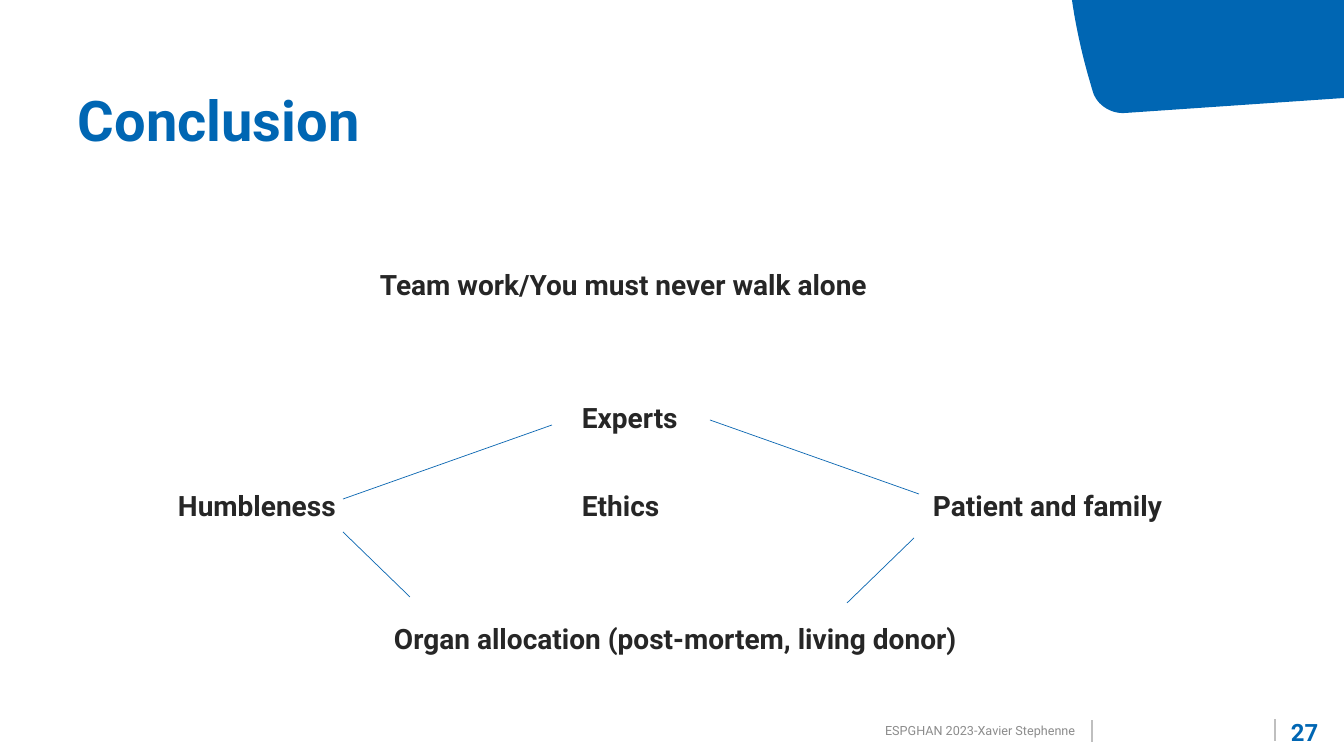
import dataclasses

import pptx
import pptx.dml.color
import pptx.enum.shapes
import pptx.enum.text
import pptx.oxml.ns
import pptx.util
from lxml import etree

EMU_PER_PX = 914400 / 100.8
ANCHOR = pptx.enum.text.MSO_ANCHOR
ALIGN = pptx.enum.text.PP_ALIGN


@dataclasses.dataclass(frozen=True)
class Theme:
    font: str = "Roboto"
    blue: str = "0066B3"
    link: str = "0B67B2"
    ink: str = "262626"
    muted: str = "8C8C8C"
    rule: str = "BFBFBF"
    white: str = "FFFFFF"
    title_size: int = 40
    label_size: int = 20
    number_size: int = 17
    footer_size: int = 9
    thin: float = 0.5
    medium: float = 1


THEME = Theme()


def px(length):
    return pptx.util.Emu(round(length * EMU_PER_PX))


def rgb(color):
    return pptx.dml.color.RGBColor.from_string(color)


def add_text(page, box, text, size, color, bold=True, anchor=ANCHOR.MIDDLE,
             align=ALIGN.LEFT, spacing=0.9):
    shape = page.shapes.add_textbox(*map(px, box))
    frame = shape.text_frame
    frame.word_wrap = True
    frame.vertical_anchor = anchor
    frame.margin_left = frame.margin_right = 0
    frame.margin_top = frame.margin_bottom = 0
    para = frame.paragraphs[0]
    para.alignment = align
    para.line_spacing = spacing
    span = para.add_run()
    span.text = text
    span.font.name = THEME.font
    span.font.size = pptx.util.Pt(size)
    span.font.bold = bold
    span.font.color.rgb = rgb(color)


def add_line(page, start, end, color, width):
    line = page.shapes.add_connector(
        pptx.enum.shapes.MSO_CONNECTOR.STRAIGHT, *map(px, (*start, *end)))
    line.line.color.rgb = rgb(color)
    line.line.width = pptx.util.Pt(width)
    properties = line._element.spPr
    etree.SubElement(properties, pptx.oxml.ns.qn("a:effectLst"))


def curve_points(start, first, second, end, steps=16):
    for step in range(1, steps + 1):
        t = step / steps
        weights = ((1 - t) ** 3, 3 * t * (1 - t) ** 2, 3 * t * t * (1 - t), t ** 3)
        yield tuple(sum(weight * point[axis] for weight, point
                        in zip(weights, (start, first, second, end)))
                    for axis in (0, 1))


def draw_corner(page, box):
    left, top, width, height = box
    edge, bend = (53, height), (21, 92)
    outline = [(width, 0), (width, 98), edge,
               *curve_points(edge, (39, 114), (25, 105), bend),
               *curve_points(bend, (15, 72), (6, 41), (0, 0))]
    builder = page.shapes.build_freeform(px(left), px(top), scale=1.0)
    builder.add_line_segments([(px(left + x), px(top + y)) for x, y in outline])
    corner = builder.convert_to_shape()
    corner.shadow.inherit = False
    corner.fill.solid()
    corner.fill.fore_color.rgb = rgb(THEME.blue)
    corner.line.fill.background()


def draw_title(page, box):
    add_text(page, box, "Conclusion", THEME.title_size, THEME.blue,
             anchor=ANCHOR.BOTTOM)


def draw_diagram(page, box):
    left, top, width, height = box
    labels = (
        ("Team work/You must never walk alone", 302, 62, 520),
        ("Experts", 504, 195, 120),
        ("Humbleness", 100, 283, 180),
        ("Ethics", 504, 283, 120),
        ("Patient and family", 855, 283, 260),
        ("Organ allocation (post-mortem, living donor)", 316, 416, 600),
    )
    label_height = 30
    for text, x, middle, label_width in labels:
        label_box = (left + x, top + middle - label_height // 2,
                     label_width, label_height)
        add_text(page, label_box, text, THEME.label_size, THEME.ink)
    links = (
        ((265, 275), (474, 201)),
        ((841, 270), (632, 196)),
        ((265, 308), (332, 373)),
        ((836, 314), (769, 379)),
    )
    for start, end in links:
        add_line(page, (left + start[0], top + start[1]),
                 (left + end[0], top + end[1]), THEME.link, THEME.thin)


def draw_footer(page, box):
    left, top, width, height = box
    rules = (
        (653, 1, THEME.white, THEME.thin),
        (649, 1, THEME.rule, THEME.medium),
        (466, 2, THEME.rule, THEME.medium),
    )
    for x, drop, color, weight in rules:
        add_line(page, (left + x, top + drop + 22), (left + x, top + drop),
                 color, weight)
    add_text(page, (left, top + 2, 449, 22), "ESPGHAN 2023-Xavier Stephenne",
             THEME.footer_size, THEME.muted, bold=False, align=ALIGN.RIGHT)
    add_text(page, (left + 665, top - 1, 47, 29), "27", THEME.number_size,
             THEME.blue, anchor=ANCHOR.BOTTOM, spacing=1.0)


def main():
    deck = pptx.Presentation()
    deck.slide_width = px(1344)
    deck.slide_height = px(756)
    page = deck.slides.add_slide(deck.slide_layouts[6])
    draw_corner(page, (1072, 0, 272, 113))
    draw_title(page, (78, 70, 1025, 84))
    draw_diagram(page, (78, 224, 1159, 456))
    draw_footer(page, (626, 718, 718, 38))
    deck.save("out.pptx")


if __name__ == "__main__":
    main()
